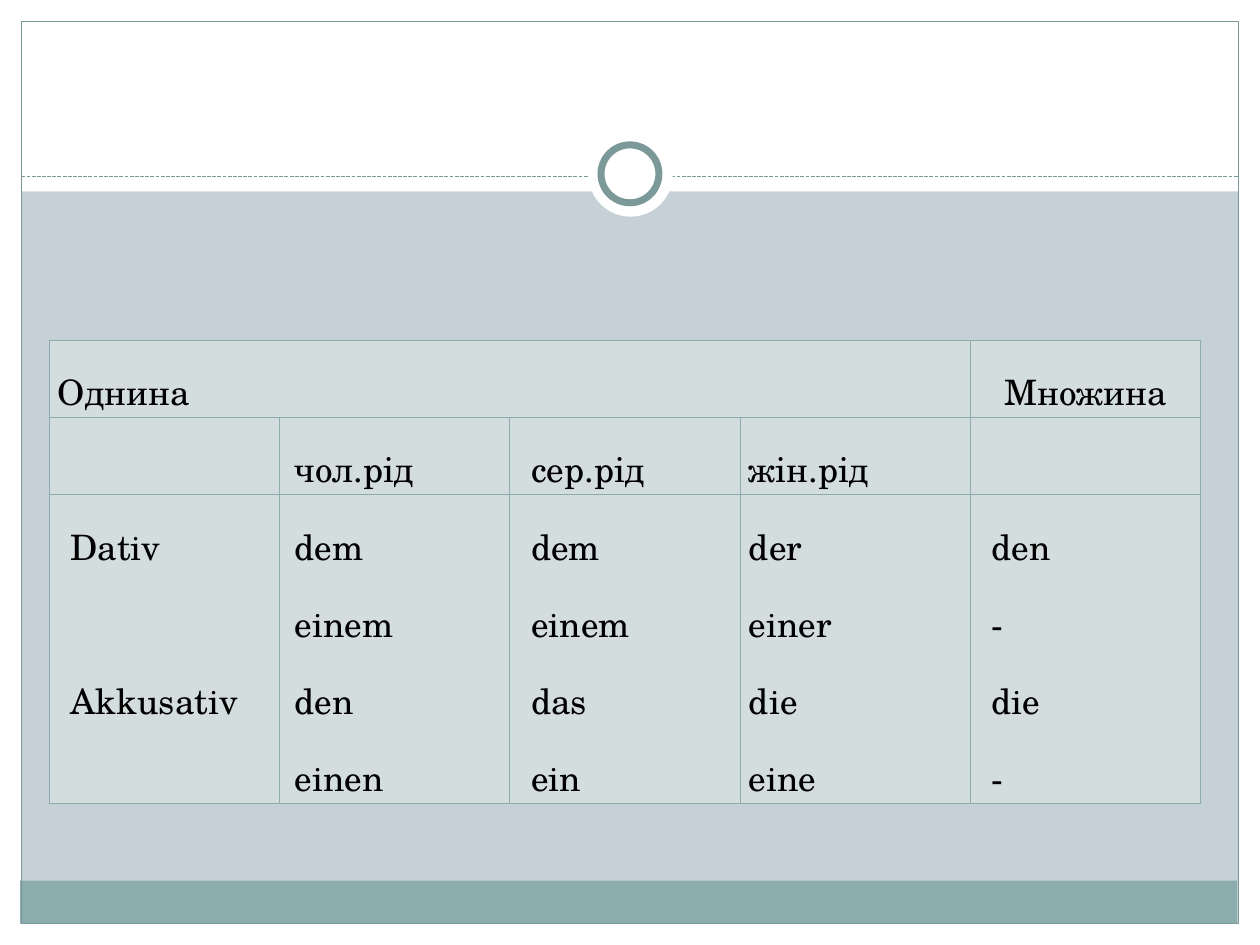
from lxml import etree
from pptx import Presentation
from pptx import util as u
from pptx.dml.color import RGBColor
from pptx.enum import dml, shapes, text
from pptx.oxml.ns import qn

WHITE = RGBColor(0xFF, 0xFF, 0xFF)
BLACK = RGBColor(0, 0, 0)
BACKDROP = RGBColor(0xC5, 0xD1, 0xD7)
TEAL = RGBColor(0x8C, 0xAD, 0xAE)
DARK_TEAL = RGBColor(0x7C, 0x99, 0x9A)
CELL_FILL = RGBColor(0xD4, 0xDD, 0xDE)


class SlideBuilder:
    font = "TeX Gyre Schola"
    size = u.Pt(20)
    line_pitch = u.Pt(44)  # height of one line at 1.5 spacing
    thin = 0.75

    def __init__(self, slide):
        self.slide = slide
        slide.background.fill.solid()
        slide.background.fill.fore_color.rgb = BACKDROP

    def shape(self, kind, box, fill=None, line=None, width=thin):
        item = self.slide.shapes.add_shape(kind, *map(u.Inches, box))
        item.shadow.inherit = False
        if fill is None:
            item.fill.background()
        else:
            item.fill.solid()
            item.fill.fore_color.rgb = fill
        if line is None:
            item.line.fill.background()
        else:
            item.line.color.rgb = line
            item.line.width = u.Pt(width)

    def dashed_line(self, start, end):
        rule = self.slide.shapes.add_connector(
            shapes.MSO_CONNECTOR.STRAIGHT, *map(u.Inches, start + end))
        rule.line.color.rgb = DARK_TEAL
        rule.line.width = u.Pt(self.thin)
        rule.line.dash_style = dml.MSO_LINE.SQUARE_DOT
        etree.SubElement(rule._element.spPr, qn("a:effectLst"))

    def table(self, left, top, width, row_heights, columns):
        grid = self.slide.shapes.add_table(
            len(row_heights), columns, u.Inches(left), u.Inches(top),
            u.Inches(width), u.Inches(sum(row_heights))).table
        grid.first_row = grid.horz_banding = False
        for row, height in zip(grid.rows, row_heights):
            row.height = u.Inches(height)
        return grid

    def cell(self, cell, lines, indent):
        cell.margin_left = cell.margin_right = u.Inches(0.07)
        cell.margin_top = cell.margin_bottom = 0
        self.borders(cell)
        cell.fill.solid()
        cell.fill.fore_color.rgb = CELL_FILL
        skipped = 0
        frame = cell.text_frame
        for number, line in enumerate(lines):
            if not line:  # an unused line becomes space before the next one
                skipped += 1
                continue
            paragraph = frame.add_paragraph() if number else frame.paragraphs[0]
            paragraph.text = line
            paragraph.alignment = text.PP_ALIGN.JUSTIFY
            paragraph.line_spacing = 1.5
            if skipped:
                paragraph.space_before = skipped * self.line_pitch
                skipped = 0
            paragraph._p.get_or_add_pPr().set("marL", str(u.Inches(indent)))
            font = paragraph.runs[0].font
            font.name, font.size, font.bold = self.font, self.size, False
            font.color.rgb = BLACK

    def borders(self, cell):
        properties = cell._tc.get_or_add_tcPr()
        for side in ("lnL", "lnR", "lnT", "lnB"):
            edge = etree.SubElement(properties, qn(f"a:{side}"),
                                    w=str(u.Pt(self.thin)))
            fill = etree.SubElement(edge, qn("a:solidFill"))
            etree.SubElement(fill, qn("a:srgbClr"), val=str(TEAL))


def main():
    deck = Presentation()
    deck.slide_width, deck.slide_height = u.Inches(10), u.Inches(7.5)
    page = SlideBuilder(deck.slides.add_slide(deck.slide_layouts[6]))
    rect, oval = shapes.MSO_SHAPE.RECTANGLE, shapes.MSO_SHAPE.OVAL

    # White margins and title area
    for margin in ((0, 7.33, 10, 0.17), (0, 0, 10, 1.52),
                   (0, 0, 0.17, 7.5), (9.83, 0, 0.17, 7.5)):
        page.shape(rect, margin, WHITE)

    # Footer band, frame and divider with ring
    page.shape(rect, (0.16, 6.99, 9.66, 0.34), TEAL)
    page.shape(rect, (0.17, 0.17, 9.66, 7.16), line=DARK_TEAL)
    page.dashed_line((0.17, 1.4), (9.83, 1.4))
    page.shape(oval, (4.67, 1.05, 0.67, 0.67), WHITE)
    page.shape(oval, (4.77, 1.15, 0.46, 0.46), WHITE, DARK_TEAL, 4)

    # Article declension table
    articles = [
        [["Однина"], [], [], [], ["Множина"]],
        [[], ["чол.рід"], ["сер.рід"], ["жін.рід"], []],
        [["Dativ", "", "Akkusativ"],
         ["dem", "einem", "den", "einen"],
         ["dem", "einem", "das", "ein"],
         ["der", "einer", "die", "eine"],
         ["den", "-", "die", "-"]],
    ]
    column_indents = (0.1, 0.05, 0.1, 0, 0.1)
    heading_indents = {(0, 0): 0, (0, 4): 0.2}
    declension = page.table(0.39, 2.7, 9.14, (0.61, 0.61, 2.45), 5)
    declension.cell(0, 0).merge(declension.cell(0, 3))
    for r, row in enumerate(articles):
        for c, lines in enumerate(row):
            cell = declension.cell(r, c)
            if not cell.is_spanned:
                indent = heading_indents.get((r, c), column_indents[c])
                page.cell(cell, lines, indent)

    deck.save("out.pptx")


if __name__ == "__main__":
    main()
